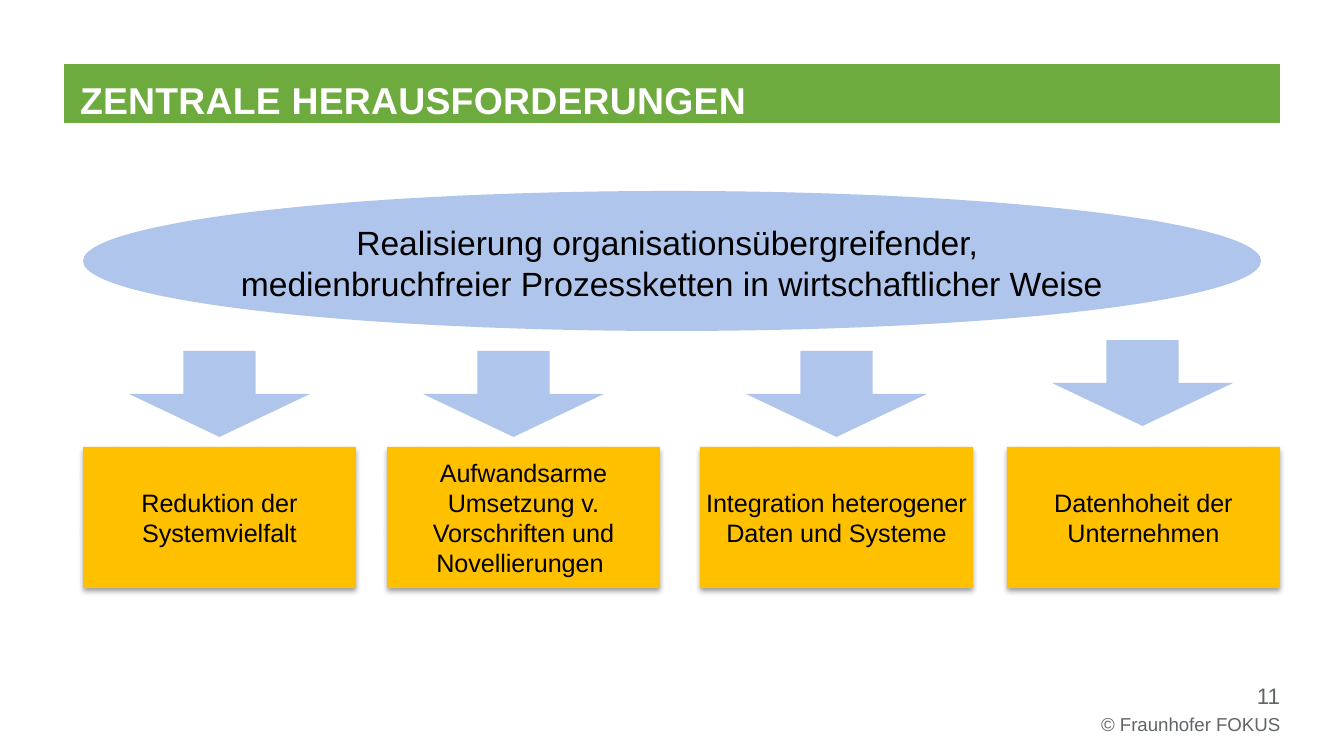
from lxml import etree
from pptx import Presentation
from pptx.dml.color import RGBColor as Rgb
from pptx.enum.shapes import MSO_SHAPE as Kind
from pptx.enum.text import MSO_ANCHOR as Anchor, PP_ALIGN as Align
from pptx.oxml.ns import qn
from pptx.util import Pt

# Content
TITLE = "ZENTRALE HERAUSFORDERUNGEN"
GOAL = ["Realisierung organisationsübergreifender, ",
        "medienbruchfreier Prozessketten in wirtschaftlicher Weise"]
# Text, box left, arrow left, arrow top
TASKS = [
    ("Reduktion der Systemvielfalt", 83, 129, 351),
    ("Aufwandsarme Umsetzung v. Vorschriften und Novellierungen ", 387, 423, 351),
    ("Integration heterogener Daten und Systeme", 700, 746, 351),
    ("Datenhoheit der Unternehmen", 1007, 1052, 340),
]
# Text, top, height, size
FOOT = [("11", 682, 28, 12), ("© Fraunhofer FOKUS", 711, 26, 10)]

COLORS = {"green": "6EAB3E", "blue": "7C9FDE", "gold": "FFC000",
          "gray": "616567", "white": "FFFFFF", "black": "000000"}
BOX_W, BOX_H, BOX_TOP = 273, 141, 447
ARROW_W, ARROW_H = 181, 86
RIGHT = 1280


def px(n):
    return round(n * 914400 / 134.4)


def color(name):
    return Rgb.from_string(COLORS[name])


def add_alpha(node, percent):
    etree.SubElement(node, qn("a:alpha"), val=str(percent * 1000))


def add_shape(kind, x, y, w, h, fill, alpha=None):
    shape = slide.shapes.add_shape(kind, px(x), px(y), px(w), px(h))
    shape.shadow.inherit = False
    shape.fill.solid()
    shape.fill.fore_color.rgb = color(fill)
    shape.line.fill.background()
    if alpha:
        add_alpha(shape._element.spPr.find(".//" + qn("a:srgbClr")), alpha)
    return shape


def add_shadow(shape):
    effects = shape._element.spPr.find(qn("a:effectLst"))
    outer = etree.SubElement(effects, qn("a:outerShdw"), blurRad=str(Pt(3.1)),
                             dist=str(Pt(1.6)), dir="5400000", rotWithShape="0")
    add_alpha(etree.SubElement(outer, qn("a:srgbClr"), val=COLORS["black"]), 38)


def write(shape, lines, size, ink, align, pad=(0, 0, 0, 0), bold=False, wrap=True):
    frame = shape.text_frame
    frame.word_wrap = wrap
    frame.vertical_anchor = Anchor.MIDDLE
    (frame.margin_left, frame.margin_top,
     frame.margin_right, frame.margin_bottom) = map(px, pad)
    para = frame.paragraphs[0]
    para.alignment = align
    for i, line in enumerate(lines):
        if i:
            para.add_line_break()
        run = para.add_run()
        run.text = line
        font = run.font
        font.name, font.size, font.bold = "Arial", Pt(size), bold
        font.color.rgb = color(ink)
    return para


deck = Presentation()
deck.slide_width, deck.slide_height = px(1344), px(756)
slide = deck.slides.add_slide(deck.slide_layouts[6])

# Page number and copyright
for text, top, height, size in FOOT:
    box = slide.shapes.add_textbox(px(64), px(top), px(RIGHT - 64), px(height))
    write(box, [text], size, "gray", Align.RIGHT)

# Title bar
bar = add_shape(Kind.RECTANGLE, 64, 64, RIGHT - 64, 59, "green")
para = write(bar, [TITLE], 20, "white", Align.LEFT, (16, 0, 0, 0), bold=True)
para.line_spacing = Pt(30)
para.runs[0]._r.get_or_add_rPr().set("spc", "10")

# Goal
oval = add_shape(Kind.OVAL, 83, 191, 1178, 140, "blue", alpha=60)
write(oval, GOAL, 18, "black", Align.CENTER, (13, 5, 13, 2), wrap=False)

# Tasks, each with its arrow
for text, left, arrow_left, arrow_top in TASKS:
    box = add_shape(Kind.RECTANGLE, left, BOX_TOP, BOX_W, BOX_H, "gold")
    add_shadow(box)
    write(box, [text], 13.5, "black", Align.CENTER, (1, 1, 1, 1))
    arrow = add_shape(Kind.DOWN_ARROW, arrow_left, arrow_top,
                      ARROW_W, ARROW_H, "blue", alpha=60)
    arrow.adjustments[0] = 0.4
    arrow.adjustments[1] = 0.5

deck.save("out.pptx")
